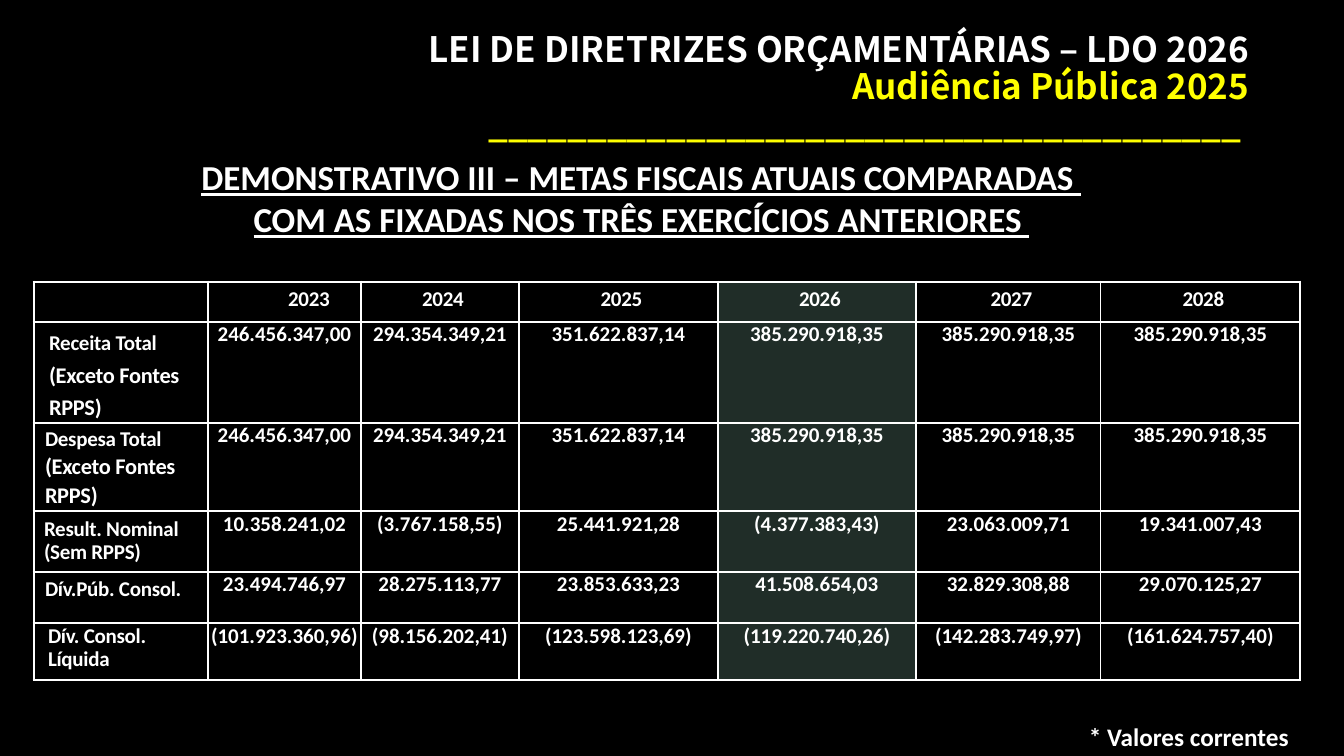
from dataclasses import dataclass

from lxml import etree
from pptx import Presentation
from pptx import util as u
from pptx.dml.color import RGBColor
from pptx.enum import text
from pptx.oxml.ns import qn

EMU_PER_INCH = 914400
PX_PER_INCH = 100.8
WHITE, YELLOW, BLACK, HIGHLIGHT = "FFFFFF", "FFFF00", "000000", "202D28"
BODY_FONT, TITLE_FONT = "Calibri", "Noto Sans CJK JP"
CENTER, LEFT, RIGHT = text.PP_ALIGN.CENTER, text.PP_ALIGN.LEFT, text.PP_ALIGN.RIGHT
THIN, THICK = 1, 2.25

YEARS = ["2023", "2024", "2025", "2026", "2027", "2028"]
HIGHLIGHT_YEAR = "2026"
COLUMN_WIDTHS = [174, 153, 158, 199, 198, 185, 199]
HEADER_HEIGHT = 40


@dataclass
class Goal:
    """One table row; note is the larger second part of its label."""
    label: str
    note: str
    height: int
    label_top: int
    indent: int
    spacing: float | u.Pt
    value_top: int
    values: list[str]


GOALS = [
    Goal("Receita Total ", "(Exceto Fontes RPPS)", 101, 4, 15, 1.19, 0,
         ["246.456.347,00", "294.354.349,21", "351.622.837,14",
          "385.290.918,35", "385.290.918,35", "385.290.918,35"]),
    Goal("Despesa Total ", "(Exceto Fontes RPPS)", 88, 1, 11, u.Pt(20.3), 0,
         ["246.456.347,00", "294.354.349,21", "351.622.837,14",
          "385.290.918,35", "385.290.918,35", "385.290.918,35"]),
    Goal("Result. Nominal (Sem RPPS)", "", 61, 8, 10, u.Pt(16.7), 1,
         ["10.358.241,02", "(3.767.158,55)", "25.441.921,28",
          "(4.377.383,43)", "23.063.009,71", "19.341.007,43"]),
    Goal("Dív.Púb. Consol.", "", 51, 7, 11, u.Pt(16.7), 0,
         ["23.494.746,97", "28.275.113,77", "23.853.633,23",
          "41.508.654,03", "32.829.308,88", "29.070.125,27"]),
    Goal("Dív. Consol. Líquida", "", 57, 1, 14, 0.93, 1,
         ["(101.923.360,96)", "(98.156.202,41)", "(123.598.123,69)",
          "(119.220.740,26)", "(142.283.749,97)", "(161.624.757,40)"]),
]


def px(length: int) -> u.Emu:
    return u.Emu(round(length * EMU_PER_INCH / PX_PER_INCH))


def color(code: str) -> RGBColor:
    return RGBColor.from_string(code)


def style_span(span, size: float, code: str = WHITE, font: str = BODY_FONT,
               tracking: float = 0) -> None:
    span.font.size = u.Pt(size)
    span.font.name = font
    span.font.bold = True
    span.font.color.rgb = color(code)
    if tracking:
        span.font._element.set("spc", str(round(tracking * 100)))


def add_box(page, left: int, top: int, width: int, height: int, content: str,
            align, wrap: bool = True):
    box = page.shapes.add_textbox(px(left), px(top), px(width), px(height))
    frame = box.text_frame
    frame.word_wrap = wrap
    frame.text = content
    for para in frame.paragraphs:
        para.alignment = align
    return frame


def add_title(page) -> None:
    frame = add_box(page, 100, 34, 1159, 147,
                    "LEI DE DIRETRIZES ORÇAMENTÁRIAS – LDO 2026\n"
                    "Audiência Pública 2025\n" + "_" * 38 + " ", RIGHT)
    frame.vertical_anchor = text.MSO_ANCHOR.MIDDLE
    frame.margin_top, frame.margin_bottom = 0, px(38)
    for para, code in zip(frame.paragraphs, [WHITE, YELLOW, YELLOW]):
        para.line_spacing = 0.9
        style_span(para.runs[0], 25, code, TITLE_FONT)


def add_subtitle(page) -> None:
    frame = add_box(page, 78, 151, 1127, 95,
                    "DEMONSTRATIVO III – METAS FISCAIS ATUAIS COMPARADAS \n"
                    "COM AS FIXADAS NOS TRÊS EXERCÍCIOS ANTERIORES ", CENTER)
    for para in frame.paragraphs:
        style_span(para.runs[0], 25)
        para.runs[0].font.underline = True


def add_footnote(page) -> None:
    frame = add_box(page, 1079, 716, 221, 40, "* Valores correntes", LEFT, wrap=False)
    style_span(frame.paragraphs[0].runs[0], 18)


def set_borders(cell, widths: dict[str, float]) -> None:
    properties = cell._tc.get_or_add_tcPr()
    for side, width in widths.items():
        line = etree.SubElement(properties, qn(f"a:ln{side}"), w=str(u.Pt(width)))
        fill = etree.SubElement(line, qn("a:solidFill"))
        etree.SubElement(fill, qn("a:srgbClr"), val=WHITE)


def fill_cell(cell, content: str, top: int, indent: int = 0, align=CENTER,
              tracking: float = 0):
    cell.margin_top = px(top)
    para = cell.text_frame.paragraphs[0]
    para.text = content
    para.alignment = align
    para._p.get_or_add_pPr().set("marL", str(px(indent)))
    style_span(para.runs[0], 15, tracking=tracking)
    return para


def frame_cells(table) -> None:
    """Give every cell its borders, fill and zero margins."""
    last_row, last_column = len(table.rows) - 1, len(table.columns) - 1
    for r in range(last_row + 1):
        for c in range(last_column + 1):
            cell = table.cell(r, c)
            set_borders(cell, {"L": THICK if c == 0 else THIN,
                               "R": THICK if c == last_column else THIN,
                               "T": THICK if r == 0 else THIN,
                               "B": THICK if r == last_row else THIN})
            if c == YEARS.index(HIGHLIGHT_YEAR) + 1:
                cell.fill.solid()
                cell.fill.fore_color.rgb = color(HIGHLIGHT)
            else:
                cell.fill.background()
            cell.margin_left = cell.margin_right = 0
            cell.margin_top = cell.margin_bottom = 0


def add_goals_table(page) -> None:
    heights = [HEADER_HEIGHT] + [goal.height for goal in GOALS]
    table = page.shapes.add_table(len(heights), len(COLUMN_WIDTHS), px(34), px(282),
                                  px(sum(COLUMN_WIDTHS)), px(sum(heights))).table
    table.first_row = table.horz_banding = False
    for column, width in zip(table.columns, COLUMN_WIDTHS):
        column.width = px(width)
    for row, height in zip(table.rows, heights):
        row.height = px(height)
    frame_cells(table)

    for c, year in enumerate(YEARS, 1):
        fill_cell(table.cell(0, c), year, 5, 49 if c == 1 else 6, tracking=-0.2)
    for r, goal in enumerate(GOALS, 1):
        para = fill_cell(table.cell(r, 0), goal.label, goal.label_top, goal.indent,
                         LEFT, tracking=-0.2)
        para.line_spacing = goal.spacing
        if goal.note:
            note = para.add_run()
            note.text = goal.note
            style_span(note, 16, tracking=-0.2)
        for c, value in enumerate(goal.values, 1):
            fill_cell(table.cell(r, c), value, goal.value_top)


def main() -> None:
    deck = Presentation()
    deck.slide_width, deck.slide_height = px(1344), px(756)
    page = deck.slides.add_slide(deck.slide_layouts[6])
    page.background.fill.solid()
    page.background.fill.fore_color.rgb = color(BLACK)
    add_title(page)
    add_subtitle(page)
    add_goals_table(page)
    add_footnote(page)
    deck.save("out.pptx")


if __name__ == "__main__":
    main()
